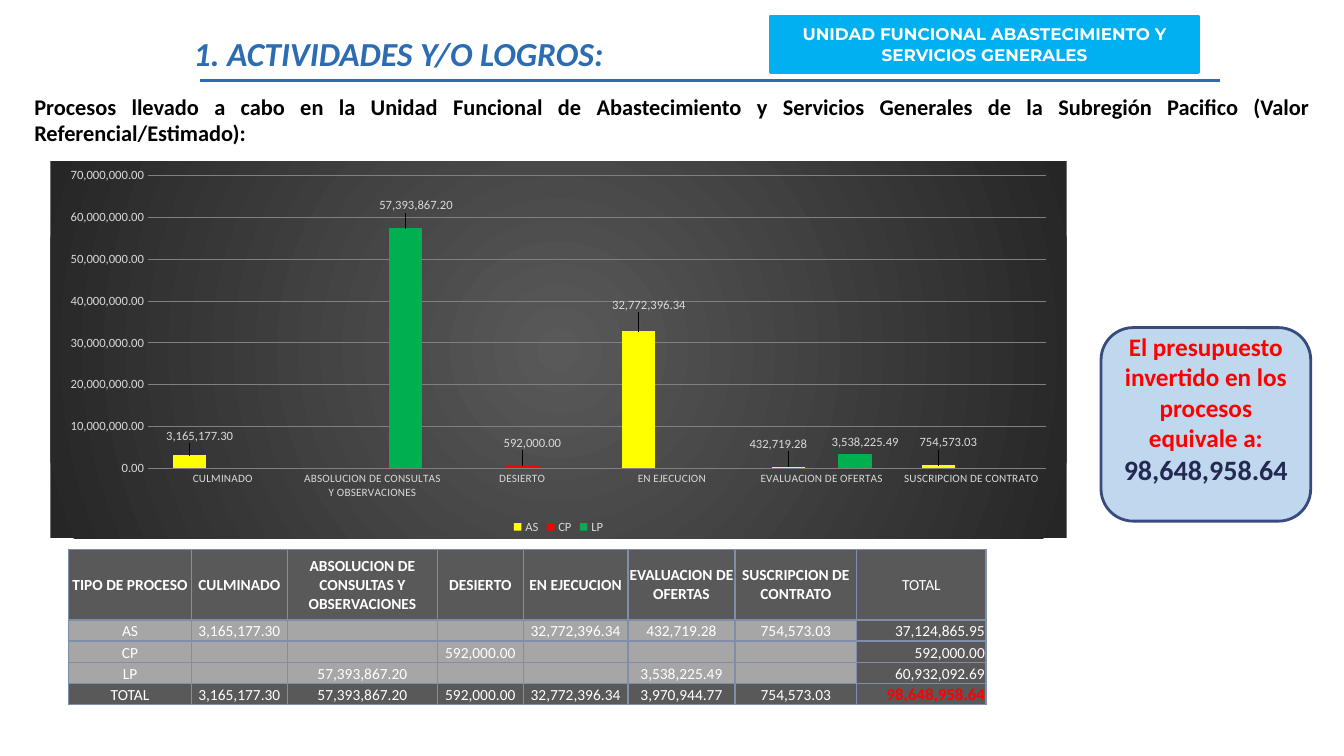
from dataclasses import dataclass

from lxml import etree
from pptx import Presentation
from pptx.chart.data import CategoryChartData
from pptx.dml.color import RGBColor
from pptx.enum.chart import XL_CHART_TYPE, XL_LABEL_POSITION, XL_LEGEND_POSITION, XL_TICK_MARK
from pptx.enum.shapes import MSO_CONNECTOR, MSO_SHAPE
from pptx.enum.text import MSO_ANCHOR, PP_ALIGN
from pptx.oxml import parse_xml
from pptx.oxml.ns import nsdecls, qn
from pptx.util import Inches, Pt


class Theme:
    font, banner_font = "Calibri", "Montserrat"
    white, black, red, blue, sky, navy = "FFFFFF", "000000", "FF0000", "2C6CB3", "00B0F0", "242852"
    callout_fill, callout_line = "C0D8ED", "374B7F"
    dark, darker, gray, border = "595959", "262626", "A6A6A6", "7F8FA9"
    chart_grid, chart_text, yellow, green = "808080", "D9D9D9", "FFFF00", "00B050"
    title_pt, total_pt, callout_pt, lead_pt = 24, 20, 18, 16
    banner_pt, table_pt, chart_pt, category_pt = 12, 11, 9, 8


T = Theme()


@dataclass(frozen=True)
class Process:
    """Amounts and label shifts (shares of the chart) by status index."""
    name: str
    color: str
    amounts: dict
    shifts: dict


STATUSES = ["CULMINADO", "ABSOLUCION DE CONSULTAS Y OBSERVACIONES", "DESIERTO",
            "EN EJECUCION", "EVALUACION DE OFERTAS", "SUSCRIPCION DE CONTRATO"]
PROCESSES = [
    Process("AS", T.yellow, {0: 3165177.30, 3: 32772396.34, 4: 432719.28, 5: 754573.03},
            {0: (0.01, -0.02), 3: (0.01, -0.04), 4: (-0.01, -0.03), 5: (0.01, -0.03)}),
    Process("CP", T.red, {2: 592000.00}, {2: (0.01, -0.03)}),
    Process("LP", T.green, {1: 57393867.20, 4: 3538225.49}, {1: (0.01, -0.03), 4: (0.01, 0)}),
]
TOTAL = sum(sum(p.amounts.values()) for p in PROCESSES)
COLUMN_WIDTHS = [14.64, 11.4, 17.88, 10.2, 12.48, 12.72, 14.52, 15.36]
ROW_HEIGHTS = [8.4] + [2.52] * 4
MONEY = "#,##0.00"


def grid(*cells: float) -> list:
    """Lengths on a grid of 160 columns by 90 rows, twelve cells to the inch."""
    return [Inches(c / 12) for c in cells]


def rgb(color: str) -> RGBColor:
    return RGBColor.from_string(color)


def money(amount) -> str:
    return f"{amount:,.2f}" if amount else ""


def style(font, size: int, color: str, bold: bool = False, italic: bool = False,
          name: str = T.font) -> None:
    font.name, font.size, font.bold, font.italic = name, Pt(size), bold, italic
    font.color.rgb = rgb(color)


def add_label(s, box: list, text: str, align: PP_ALIGN, size: int, color: str,
              italic: bool = False) -> None:
    tf = s.shapes.add_textbox(*box).text_frame
    tf.word_wrap = True
    tf.margin_left = tf.margin_right = tf.margin_top = tf.margin_bottom = 0
    p = tf.paragraphs[0]
    p.text, p.alignment = text, align
    style(p.font, size, color, True, italic)


def add_panel(s, kind: MSO_SHAPE, box: list, fill: str, line: str):
    sp = s.shapes.add_shape(kind, *box)
    sp.shadow.inherit = False
    sp.fill.solid()
    sp.fill.fore_color.rgb = rgb(fill)
    sp.line.color.rgb, sp.line.width = rgb(line), Pt(2)
    tf = sp.text_frame
    tf.word_wrap, tf.vertical_anchor = True, MSO_ANCHOR.MIDDLE
    tf.paragraphs[0].alignment = PP_ALIGN.CENTER
    return tf


def layout(x: float, y: float, size: tuple = ()):
    """Inner plot area if a size is given, else a label shift."""
    parts = [("layoutTarget", "inner"), ("xMode", "edge"), ("yMode", "edge")] if size else []
    parts += [("x", x), ("y", y), *zip("wh", size)]
    inner = "".join(f'<c:{tag} val="{value}"/>' for tag, value in parts)
    return parse_xml(f'<c:layout {nsdecls("c")}><c:manualLayout>{inner}</c:manualLayout></c:layout>')


def add_process_chart(s, box: list) -> None:
    data = CategoryChartData(number_format=MONEY)
    data.categories = STATUSES
    for process in PROCESSES:
        data.add_series(process.name, [process.amounts.get(i) for i in range(len(STATUSES))])
    chart = s.shapes.add_chart(XL_CHART_TYPE.COLUMN_CLUSTERED, *box, data).chart
    style(chart.font, T.chart_pt, T.chart_text)
    chart.has_title, chart.has_legend = False, True
    chart.legend.position, chart.legend.include_in_layout = XL_LEGEND_POSITION.BOTTOM, False
    # Axes
    axis = chart.value_axis
    axis.minimum_scale, axis.maximum_scale, axis.major_unit = 0, 70_000_000, 10_000_000
    line = axis.major_gridlines.format.line
    line.color.rgb, line.width = rgb(T.chart_grid), Pt(0.75)
    axis.tick_labels.number_format, axis.tick_labels.number_format_is_linked = MONEY, False
    for ax, size in ((axis, T.chart_pt), (chart.category_axis, T.category_pt)):
        ax.major_tick_mark = XL_TICK_MARK.NONE
        ax.format.line.fill.background()
        style(ax.tick_labels.font, size, T.chart_text)
    # Columns and value labels, without leader lines
    plot = chart.plots[0]
    plot.gap_width, plot.overlap, plot.vary_by_categories = 150, 0, False
    for series, process in zip(plot.series, PROCESSES):
        series.format.fill.solid()
        series.format.fill.fore_color.rgb = rgb(process.color)
        labels = series.data_labels
        labels.show_value, labels.number_format = True, MONEY
        labels.number_format_is_linked = False
        style(labels.font, T.chart_pt, T.chart_text)
        for i in process.shifts:
            label = series.points[i].data_label
            style(label.font, T.chart_pt, T.chart_text)
            label.position = XL_LABEL_POSITION.OUTSIDE_END
        for d, shift in zip(labels._element.findall(qn("c:dLbl")), process.shifts.values()):
            d.find(qn("c:idx")).addnext(layout(*shift))
        labels._element.append(parse_xml(
            f'<c:extLst {nsdecls("c")}><c:ext uri="{{CE6537A1-D6FC-4f65-9D91-7224C49458BB}}" '
            'xmlns:c15="http://schemas.microsoft.com/office/drawing/2012/chart">'
            '<c15:showLeaderLines val="0"/></c:ext></c:extLst>'))
    # Plot area and radial background
    root = chart._chartSpace.find(qn("c:chart"))
    area = root.find(qn("c:plotArea"))
    for old in area.findall(qn("c:layout")):
        area.remove(old)
    area.insert(0, layout(0.096, 0.038, (0.884, 0.777)))
    stops = "".join(f'<a:gs pos="{pos}"><a:srgbClr val="{color}"/></a:gs>'
                    for pos, color in ((0, T.dark), (100000, T.darker)))
    root.addnext(parse_xml(
        f'<c:spPr {nsdecls("c", "a")}><a:gradFill><a:gsLst>{stops}</a:gsLst><a:path path="circle">'
        '<a:fillToRect l="50000" t="50000" r="50000" b="50000"/></a:path></a:gradFill>'
        '<a:ln><a:noFill/></a:ln></c:spPr>'))


def add_process_table(s, col: float, row: float) -> None:
    count = range(len(STATUSES))
    rows = [["TIPO DE PROCESO", *STATUSES, "TOTAL"]]
    rows += [[p.name, *(money(p.amounts.get(i)) for i in count), money(sum(p.amounts.values()))]
             for p in PROCESSES]
    sums = [sum(p.amounts.get(i, 0) for p in PROCESSES) for i in count]
    rows.append(["TOTAL", *map(money, sums), money(TOTAL)])
    last_row, last_col = len(rows) - 1, len(COLUMN_WIDTHS) - 1
    box = grid(col, row, sum(COLUMN_WIDTHS), sum(ROW_HEIGHTS))
    table = s.shapes.add_table(len(rows), len(COLUMN_WIDTHS), *box).table
    for column, width in zip(table.columns, grid(*COLUMN_WIDTHS)):
        column.width = width
    for r, (values, height) in enumerate(zip(rows, grid(*ROW_HEIGHTS))):
        table.rows[r].height = height
        for c, value in enumerate(values):
            cell, header, grand = table.cell(r, c), r == 0, (r, c) == (last_row, last_col)
            cell.margin_left = cell.margin_right = cell.margin_top = Inches(0.01)
            cell.margin_bottom = 0
            cell.vertical_anchor = MSO_ANCHOR.MIDDLE if header else MSO_ANCHOR.BOTTOM
            for side in ("lnL", "lnR", "lnT", "lnB"):
                ln = etree.SubElement(cell._tc.get_or_add_tcPr(), qn(f"a:{side}"), w=str(Pt(1)))
                fill = etree.SubElement(ln, qn("a:solidFill"))
                etree.SubElement(fill, qn("a:srgbClr"), val=T.border)
            cell.fill.solid()
            edge = r in (0, last_row) or c == last_col
            cell.fill.fore_color.rgb = rgb(T.dark if edge else T.gray)
            p = cell.text_frame.paragraphs[0]
            p.text = value
            p.alignment = PP_ALIGN.RIGHT if c == last_col and not header else PP_ALIGN.CENTER
            style(p.font, T.banner_pt if grand else T.table_pt, T.red if grand else T.white,
                  grand or (header and c < last_col))


def main() -> None:
    prs = Presentation()
    prs.slide_width, prs.slide_height = Inches(13.33), Inches(7.5)
    s = prs.slides.add_slide(prs.slide_layouts[6])
    # Heading
    rule = s.shapes.add_connector(MSO_CONNECTOR.STRAIGHT, *grid(23.76, 9.6, 145.2, 9.6))
    rule.line.color.rgb, rule.line.width = rgb(T.blue), Pt(2.25)
    etree.SubElement(rule._element.spPr, qn("a:effectLst"))
    add_label(s, grid(23.04, 3.96, 60, 4.8), "1. ACTIVIDADES Y/O LOGROS:", PP_ALIGN.LEFT,
              T.title_pt, T.blue, True)
    add_label(s, grid(4.08, 11.04, 151.92, 6.48),
              "Procesos llevado a cabo en la Unidad Funcional de Abastecimiento y Servicios Generales "
              "de la Subregión Pacifico (Valor Referencial/Estimado):",
              PP_ALIGN.JUSTIFY, T.lead_pt, T.black)
    # Unit banner
    p = add_panel(s, MSO_SHAPE.RECTANGLE, grid(91.68, 1.92, 51, 6.72), T.sky, T.sky).paragraphs[0]
    p.text = "UNIDAD FUNCIONAL ABASTECIMIENTO Y SERVICIOS GENERALES"
    style(p.font, T.banner_pt, T.white, True, name=T.banner_font)
    # Budget callout
    tf = add_panel(s, MSO_SHAPE.ROUNDED_RECTANGLE, grid(131.04, 39, 24.96, 23.04),
                   T.callout_fill, T.callout_line)
    tf.margin_bottom = Inches(0.36)
    lead = "El presupuesto invertido en los procesos equivale a: "
    for text, size, color in ((lead, T.callout_pt, T.red), (money(TOTAL), T.total_pt, T.navy)):
        r = tf.paragraphs[0].add_run()
        r.text = text
        style(r.font, size, color, True)
    # Amounts by status
    add_process_chart(s, grid(6, 19.2, 120.96, 44.88))
    add_process_table(s, 8.16, 65.4)
    prs.save("out.pptx")


if __name__ == "__main__":
    main()
